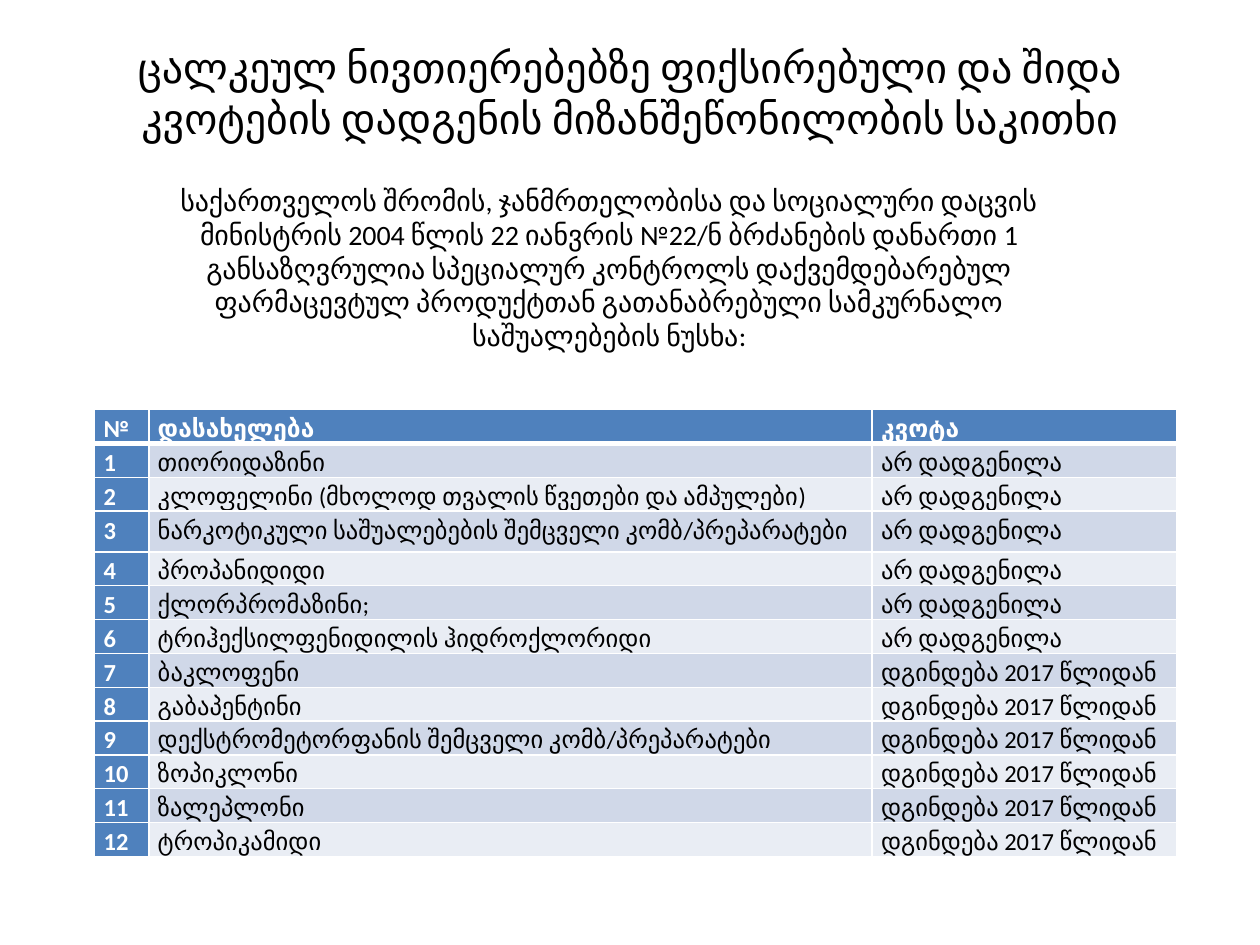
from pptx import Presentation
from pptx.dml.color import RGBColor
from pptx.enum.text import MSO_ANCHOR, PP_ALIGN
from pptx.oxml import parse_xml
from pptx.oxml.ns import nsdecls
from pptx.util import Cm, Pt

CENTER, JUSTIFY, LEFT = PP_ALIGN.CENTER, PP_ALIGN.JUSTIFY, PP_ALIGN.LEFT
MIDDLE = MSO_ANCHOR.MIDDLE
COLORS = {"ink": "000000", "white": "FFFFFF", "header": "4F81BD",
          "odd": "D0D8E8", "even": "E9EDF4"}
TITLE = ("ცალკეულ ნივთიერებებზე ფიქსირებული და შიდა კვოტების "
         "დადგენის მიზანშეწონილობის საკითხი")
DECREE = ("საქართველოს შრომის, ჯანმრთელობისა და სოციალური დაცვის მინისტრის "
          "2004 წლის 22 იანვრის №22/ნ ბრძანების დანართი 1 განსაზღვრულია "
          "სპეციალურ კონტროლს დაქვემდებარებულ ფარმაცევტულ პროდუქტთან "
          "გათანაბრებული სამკურნალო საშუალებების ნუსხა:")
HEADINGS = ("№", "დასახელება", "კვოტა")
WITHOUT_QUOTA = (
    "თიორიდაზინი",
    "კლოფელინი (მხოლოდ თვალის წვეთები და ამპულები)",
    "ნარკოტიკული საშუალებების შემცველი კომბ/პრეპარატები",
    "პროპანიდიდი",
    "ქლორპრომაზინი;",
    "ტრიჰექსილფენიდილის ჰიდროქლორიდი",
)
QUOTA_FROM_2017 = (
    "ბაკლოფენი",
    "გაბაპენტინი",
    "დექსტრომეტორფანის შემცველი კომბ/პრეპარატები",
    "ზოპიკლონი",
    "ზალეპლონი",
    "ტროპიკამიდი",
)
COLUMN_WIDTHS = (1.09, 14.58, 6.15)
ROW_HEIGHT, TALL_ROW, TALL_HEIGHT = 0.66, 3, 0.82


class QuotaSlide:
    """Holds the style and the slide on which elements are placed."""

    font = "Calibri"

    def __init__(self, slide):
        self.slide = slide

    def style(self, paragraph, size, color, align, bold=False):
        paragraph.alignment = align
        for run in paragraph.runs:
            run.font.name = self.font
            run.font.size = Pt(size)
            run.font.bold = bold
            run.font.color.rgb = RGBColor.from_string(COLORS[color])

    def text(self, wording, left, top, width, height, size, bottom_inset):
        box = self.slide.shapes.add_textbox(Cm(left), Cm(top), Cm(width), Cm(height))
        frame = box.text_frame
        frame.word_wrap = True
        frame.vertical_anchor = MIDDLE
        frame.margin_bottom = Cm(bottom_inset)
        frame.text = wording
        self.style(frame.paragraphs[0], size, "ink", CENTER)

    def borders(self, cell, bottom):
        properties = cell._tc.get_or_add_tcPr()
        widths = {"lnL": 1, "lnR": 1, "lnT": 1, "lnB": bottom}
        for position, (side, width) in enumerate(widths.items()):
            properties.insert(position, parse_xml(
                f'<a:{side} {nsdecls("a")} w="{Pt(width)}"><a:solidFill>'
                f'<a:srgbClr val="{COLORS["white"]}"/></a:solidFill></a:{side}>'))

    def cell(self, cell, wording, fill, color, bold, align, bottom):
        cell.margin_left = cell.margin_right = Cm(0.18)
        cell.margin_top = cell.margin_bottom = Cm(0)
        cell.fill.solid()
        cell.fill.fore_color.rgb = RGBColor.from_string(COLORS[fill])
        cell.text = wording
        paragraph = cell.text_frame.paragraphs[0]
        paragraph.line_spacing = 1.15
        self.style(paragraph, 14, color, align, bold)
        self.borders(cell, bottom)

    def table(self, rows, left, top):
        heights = [TALL_HEIGHT if number == TALL_ROW else ROW_HEIGHT
                   for number in range(len(rows))]
        table = self.slide.shapes.add_table(
            len(rows), len(COLUMN_WIDTHS), Cm(left), Cm(top),
            Cm(sum(COLUMN_WIDTHS)), Cm(sum(heights))).table
        for column, width in zip(table.columns, COLUMN_WIDTHS):
            column.width = Cm(width)
        for number, (row, height) in enumerate(zip(rows, heights)):
            table.rows[number].height = Cm(height)
            band = "odd" if number % 2 else "even"
            for column, wording in enumerate(row):
                heading = number == 0 or column == 0
                combined = column == 1 and wording.endswith("კომბ/პრეპარატები")
                self.cell(table.cell(number, column), wording,
                          fill="header" if heading else band,
                          color="white" if heading else "ink",
                          bold=heading,
                          align=LEFT if combined else JUSTIFY,
                          bottom=1 if number else 3)


def main():
    deck = Presentation()
    deck.slide_width, deck.slide_height = Cm(25.4), Cm(19.05)
    page = QuotaSlide(deck.slides.add_slide(deck.slide_layouts[6]))
    substances = [(name, "არ დადგენილა") for name in WITHOUT_QUOTA]
    substances += [(name, "დგინდება 2017 წლიდან") for name in QUOTA_FROM_2017]
    rows = [HEADINGS] + [(str(number), *substance)
                         for number, substance in enumerate(substances, 1)]
    page.text(TITLE, 1.27, 0.76, 22.86, 3.18, size=24, bottom_inset=1.1)
    page.table(rows, 1.91, 8.26)
    page.text(DECREE, 2.34, 3.56, 19.89, 4.37, size=16, bottom_inset=0.81)
    deck.save("out.pptx")


if __name__ == "__main__":
    main()
